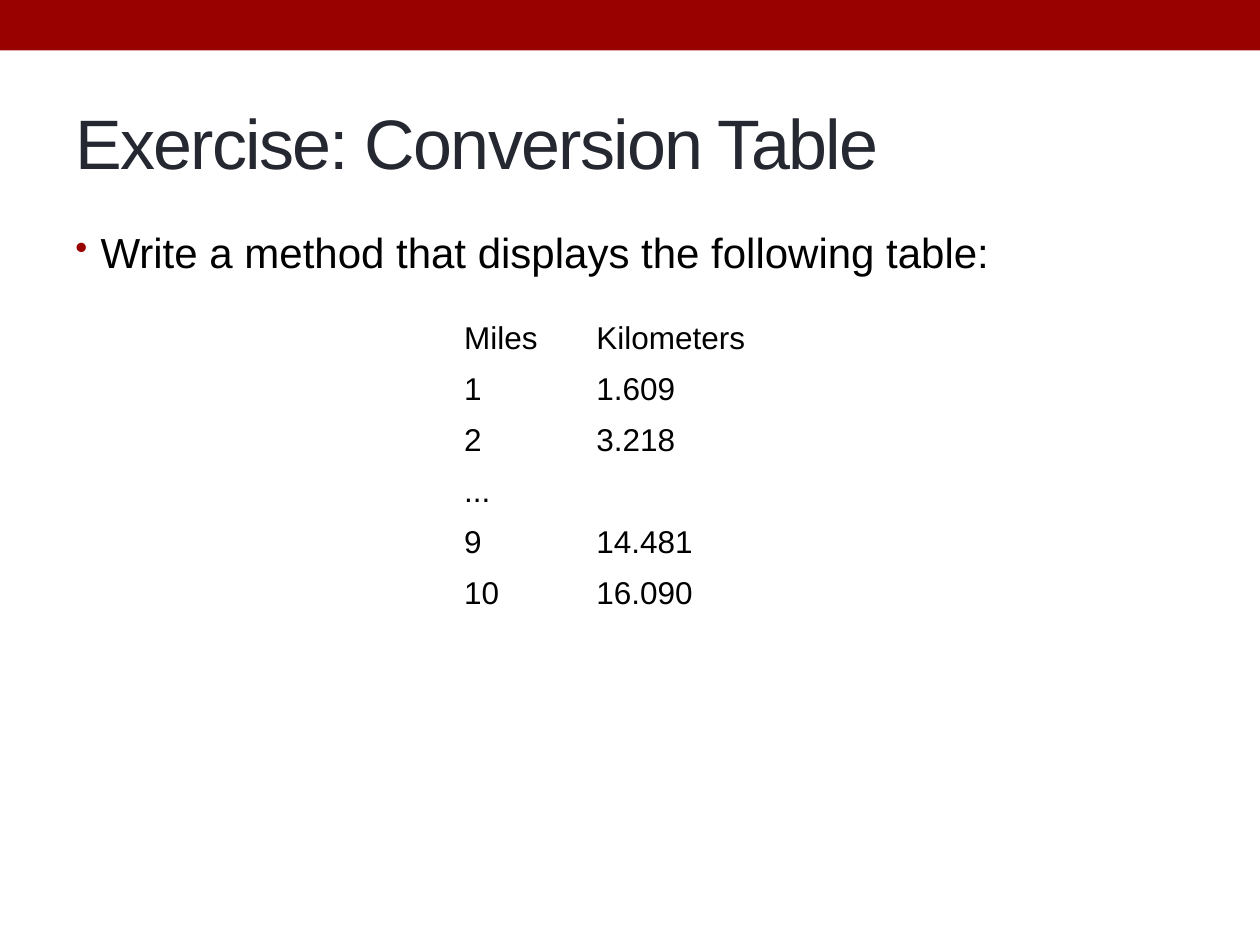
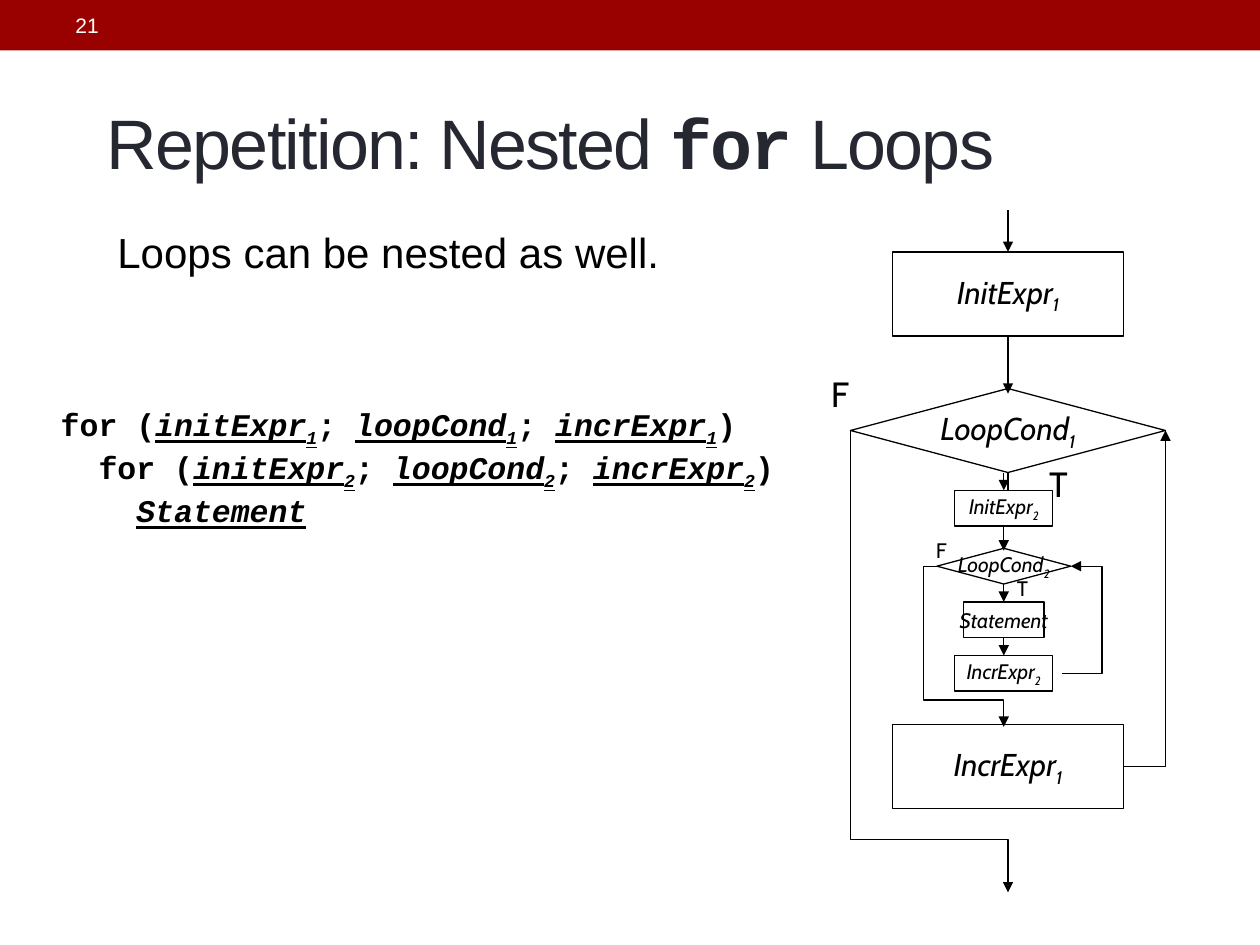
from pptx import Presentation
from pptx import util as u
from pptx.dml import color
from pptx.enum import shapes, text
from pptx.oxml import ns, xmlchemy

COLORS = {"band": "990000", "title": "252731", "ink": "000000", "paper": "FFFFFF"}
COLS, ROWS = 120, 90
CELL = u.Inches(10) // COLS
SANS, MONO, CHART_FONT = "Arial", "Courier New", "Cabin"
TITLE = dict(size=40, color="title", spacing=-1, anchor=text.MSO_ANCHOR.MIDDLE)
BODY = dict(size=24, space_before=4.8)


def rgb(name):
    return color.RGBColor.from_string(COLORS[name])


def grid(*cells):
    return [round(cell * CELL) for cell in cells]


def sub_element(parent, tag, **attributes):
    child = xmlchemy.OxmlElement(tag)
    for key, value in attributes.items():
        child.set(key, value)
    parent.append(child)
    return child


def write(frame, paragraphs, wrap=True, anchor=text.MSO_ANCHOR.TOP,
          align=text.PP_ALIGN.LEFT, space_before=0, bullet=False, indents=(), **font):
    """Fill a frame; each paragraph is a list of (text, font changes) runs."""
    frame.word_wrap, frame.vertical_anchor = wrap, anchor
    for index, runs in enumerate(paragraphs):
        paragraph = frame.add_paragraph() if index else frame.paragraphs[0]
        paragraph.alignment = align
        paragraph.space_before = u.Pt(space_before)
        props = paragraph._p.get_or_add_pPr()
        if indents:
            props.set("marL", str(u.Inches(indents[index])))
        if bullet:
            props.set("marL", str(u.Inches(0.2)))
            props.set("indent", str(u.Inches(-0.2)))
            tint = sub_element(props, "a:buClr")
            sub_element(tint, "a:srgbClr", val=COLORS["band"])
            sub_element(props, "a:buSzPct", val="85000")
            sub_element(props, "a:buChar", char="•")
        for words, changes in runs:
            add_run(paragraph, words, **{**font, **changes})


def add_run(paragraph, words, size=18, name=SANS, color="ink", bold=False,
            italic=False, underline=False, spacing=0, baseline=0):
    run = paragraph.add_run()
    run.text = words
    font = run.font
    font.size, font.name, font.color.rgb = u.Pt(size), name, rgb(color)
    font.bold, font.italic, font.underline = bold, italic, underline
    props = run._r.get_or_add_rPr()
    if spacing:
        props.set("spc", str(spacing * 100))
    if baseline:
        props.set("baseline", str(baseline * 1000))


def text_box(slide, box, paragraphs, **style):
    write(slide.shapes.add_textbox(*grid(*box)).text_frame, paragraphs, **style)


def subscripted(words, level, **changes):
    return [(words, changes), (str(level), {**changes, "baseline": -25})]


def header(slide, number=None):
    # Red band with an optional slide number
    band = slide.shapes.add_shape(shapes.MSO_SHAPE.RECTANGLE, *grid(0, 0, COLS, 4.8))
    band.shadow.inherit = False
    band.fill.solid()
    band.fill.fore_color.rgb = rgb("band")
    band.line.fill.background()
    if number:
        text_box(slide, (6, 0.25, 38, 4.3), [[(number, {})]], size=12, color="paper",
                 anchor=text.MSO_ANCHOR.MIDDLE)


def conversion_table(slide, left, top, widths, row_height, rows):
    frame = slide.shapes.add_table(len(rows), len(widths), *grid(
        left, top, sum(widths), row_height * len(rows)))
    table = frame.table
    table.first_row = table.horz_banding = False
    for column, width in zip(table.columns, widths):
        column.width = grid(width)[0]
    for r, row in enumerate(rows):
        for c, value in enumerate(row):
            cell = table.cell(r, c)
            cell.fill.background()
            write(cell.text_frame, [[(value, {})]])


class LoopChart:
    """Flowchart of one for loop, measured from its axis and entry point."""

    def __init__(self, slide, axis, top, scale, level, size):
        self.slide, self.axis, self.top, self.scale = slide, axis, top, scale
        self.level, self.size = level, size

    def point(self, x, y):
        return grid(self.axis + x * self.scale, self.top + y * self.scale)

    def node(self, words, top, width=22, kind=shapes.MSO_SHAPE.RECTANGLE, numbered=True):
        shape = self.slide.shapes.add_shape(
            kind, *self.point(-width / 2, top), *grid(width * self.scale, 8 * self.scale))
        shape.shadow.inherit = False
        shape.fill.solid()
        shape.fill.fore_color.rgb = rgb("paper")
        shape.line.color.rgb = rgb("ink")
        shape.line.width = u.Pt(0.75)
        runs = subscripted(words, self.level) if numbered else [(words, {})]
        write(shape.text_frame, [runs], wrap=False, anchor=text.MSO_ANCHOR.MIDDLE,
              align=text.PP_ALIGN.CENTER, size=self.size, name=CHART_FONT, italic=True)

    def arrow(self, start, end, bends=None, adjust=()):
        kind = shapes.MSO_CONNECTOR.ELBOW if bends else shapes.MSO_CONNECTOR.STRAIGHT
        link = self.slide.shapes.add_connector(kind, *self.point(*start), *self.point(*end))
        link.line.color.rgb = rgb("ink")
        link.line.width = u.Pt(0.75)
        props = link._element.spPr
        sub_element(props.find(ns.qn("a:ln")), "a:tailEnd", type="triangle")
        sub_element(props, "a:effectLst")
        if bends:
            geometry = props.find(ns.qn("a:prstGeom"))
            geometry.set("prst", f"bentConnector{bends}")
            geometry.rewrite_guides([(f"adj{i}" if len(adjust) > 1 else "adj1",
                                      round(share * 100000))
                                     for i, share in enumerate(adjust, 1)])

    def tag(self, letter, x, y, size):
        width, height = 4.2, 5
        left, top = self.axis + x * self.scale, self.top + y * self.scale
        text_box(self.slide, (left - width / 2, top - height / 2, width, height),
                 [[(letter, {})]], wrap=False, anchor=text.MSO_ANCHOR.MIDDLE,
                 align=text.PP_ALIGN.CENTER, size=size, name=CHART_FONT)

    def draw(self, incr_top, incr_right, exit_x, exit_turn, exit_end, back_x,
             false_x, true_x, tag_size):
        # Steps down the axis
        self.node("InitExpr", 4)
        self.node("LoopCond", 17, 30, shapes.MSO_SHAPE.DIAMOND)
        self.node("IncrExpr", incr_top)
        for start, end in ((0, 4), (12, 17.5), (25, 29)):
            self.arrow((0, start), (0, end))
        # Exit on false, leaving by the left corner
        self.arrow((-15, 21), (0, exit_end), 4,
                   ((exit_x + 15) / 15, (exit_turn - 21) / (exit_end - 21)))
        # Way back to the condition, arriving at the right corner
        start = (incr_right, incr_top + 4)
        if back_x == 15:
            self.arrow(start, (15, 21), 2)
        else:
            self.arrow(start, (15, 21), 3, [(back_x - incr_right) / (15 - incr_right)])
        self.tag("F", false_x, 17.5, tag_size)
        self.tag("T", true_x, 26, tag_size)


def nested_flowchart(slide, axis, top):
    outer = LoopChart(slide, axis, top, 1, level=1, size=18)
    outer.draw(incr_top=49, incr_right=11, exit_x=-15, exit_turn=60, exit_end=65,
               back_x=15, false_x=-16, true_x=4.8, tag_size=20)
    inner = LoopChart(slide, axis - 0.4, top + 25, 0.425, level=2, size=12)
    inner.node("Statement", 29, 18, numbered=False)
    inner.draw(incr_top=41, incr_right=13, exit_x=-18, exit_turn=51, exit_end=57,
               back_x=22, false_x=-14, true_x=4.2, tag_size=12)
    inner.arrow((0, 37), (0, 41))


def for_line(level):
    term = dict(italic=True, underline=True)
    return [("for (", {}), *subscripted("initExpr", level, **term),
            ("; ", {}), *subscripted("loopCond", level, **term),
            ("; ", {}), *subscripted("incrExpr", level, **term), (")", {})]


def exercise_slide(slide):
    header(slide)
    text_box(slide, (6, 7, 108, 13), [[("Exercise: Conversion Table", {})]], **TITLE)
    text_box(slide, (6, 21, 108, 64),
             [[("Write a method that displays the following table:", {})]],
             bullet=True, **BODY)
    conversion_table(slide, 43, 30, (12.6, 21.2), 4.86, [
        ("Miles", "Kilometers"), ("1", "1.609"), ("2", "3.218"),
        ("...", ""), ("9", "14.481"), ("10", "16.090")])


def nested_loops_slide(slide):
    header(slide, "21")
    text_box(slide, (9, 6, 102, 15),
             [[("Repetition: Nested ", {}), ("for", dict(name=MONO, bold=True)),
               (" Loops", {})]], **TITLE)
    text_box(slide, (10, 21, 106, 10), [[("Loops can be nested as well.", {})]], **BODY)
    # Code pattern
    text_box(slide, (1, 38, 82, 15.75),
             [for_line(1), for_line(2),
              [("Statement", dict(italic=True, underline=True))]],
             indents=(0.3, 0.6, 0.9), name=MONO, bold=True)
    nested_flowchart(slide, axis=96, top=20)


def main():
    deck = Presentation()
    deck.slide_width, deck.slide_height = grid(COLS, ROWS)
    for build in (exercise_slide, nested_loops_slide):
        build(deck.slides.add_slide(deck.slide_layouts[6]))
    deck.save("out.pptx")


if __name__ == "__main__":
    main()
